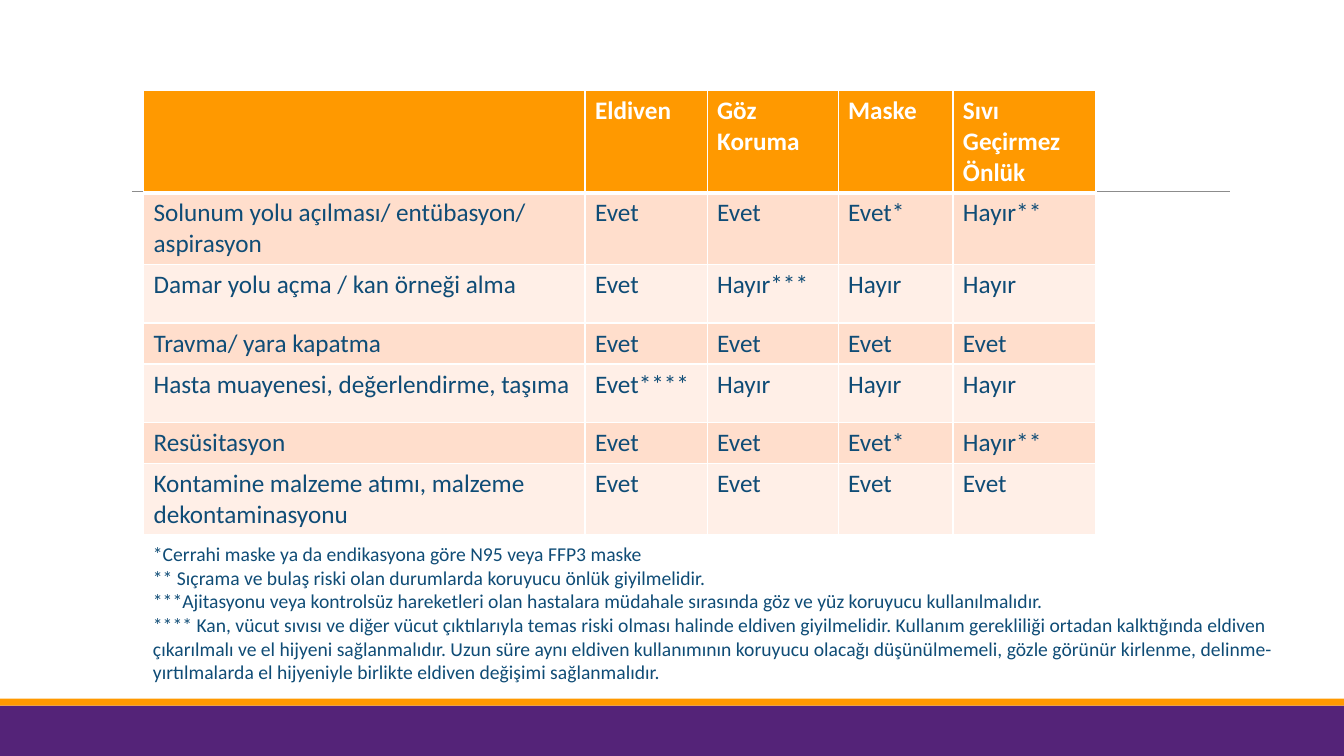
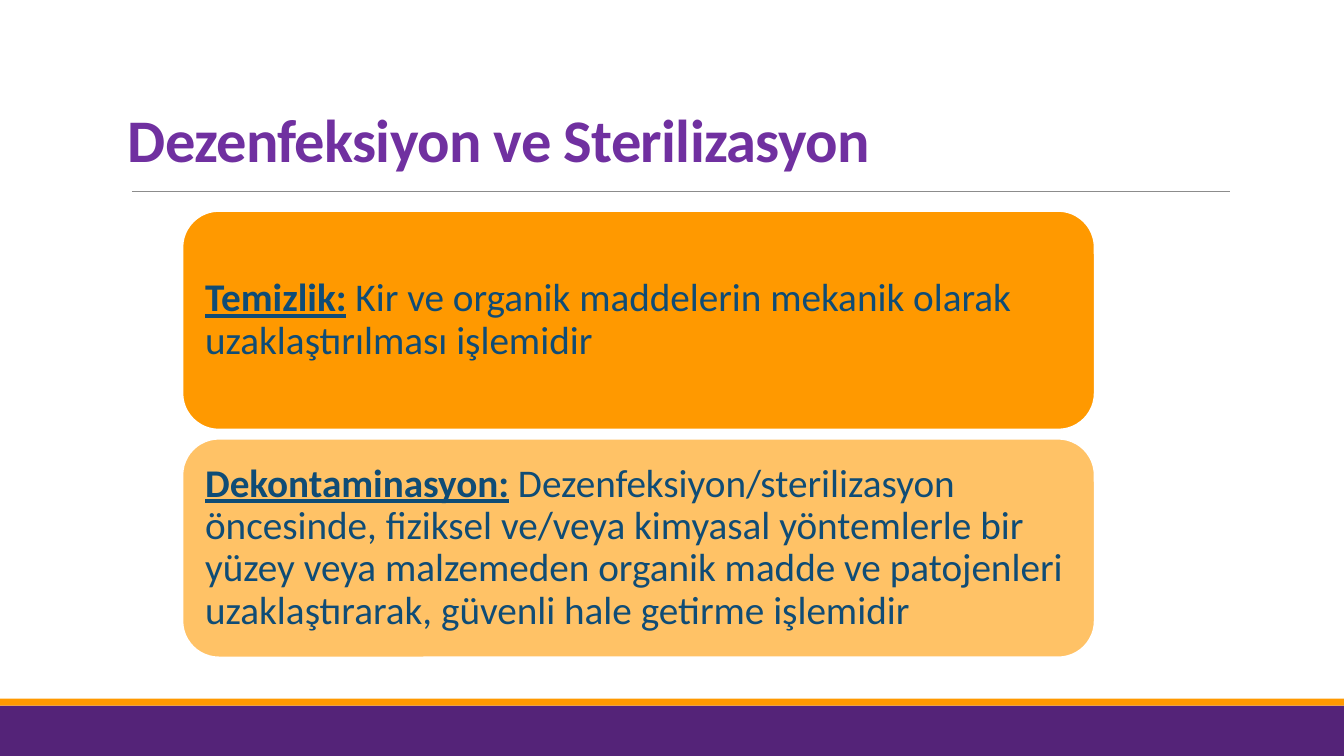
from lxml import etree
from pptx import Presentation
from pptx.dml.color import RGBColor
from pptx.enum import shapes, text
from pptx.oxml import ns
from pptx.util import Pt

COLORS = {
    "purple": "542378", "title": "7030A0", "orange": "FF9900",
    "light_orange": "FFC266", "ink": "0F4C76", "white": "FFFFFF",
    "rule": "8C8C8C", "row_odd": "FFDECC", "row_even": "FFEFE7",
}
FONT = "Calibri"
WIDTH, HEIGHT = 960, 540

PROTECTION_TABLE = [
    ["", "Eldiven", "Göz Koruma", "Maske", "Sıvı Geçirmez Önlük"],
    ["Solunum yolu açılması/ entübasyon/ aspirasyon", "Evet", "Evet", "Evet*", "Hayır**"],
    ["Damar yolu açma / kan örneği alma", "Evet", "Hayır***", "Hayır", "Hayır"],
    ["Travma/ yara kapatma", "Evet", "Evet", "Evet", "Evet"],
    ["Hasta muayenesi, değerlendirme, taşıma", "Evet****", "Hayır", "Hayır", "Hayır"],
    ["Resüsitasyon", "Evet", "Evet", "Evet*", "Hayır**"],
    ["Kontamine malzeme atımı, malzeme dekontaminasyonu", "Evet", "Evet", "Evet", "Evet"],
]
COLUMN_WIDTHS = [315.4, 87.2, 93.6, 82, 102.2]
ROW_HEIGHTS = [60.5, 41.8, 41.8, 27.4, 41.8, 27.4, 47.5]

FOOTNOTES = [
    "*Cerrahi maske ya da endikasyona göre N95 veya FFP3 maske",
    "** Sıçrama ve bulaş riski olan durumlarda koruyucu önlük giyilmelidir.",
    "***Ajitasyonu veya kontrolsüz hareketleri olan hastalara müdahale sırasında göz ve yüz "
    "koruyucu kullanılmalıdır.",
    "**** Kan, vücut sıvısı ve diğer vücut çıktılarıyla temas riski olması halinde eldiven "
    "giyilmelidir. Kullanım gerekliliği ortadan kalktığında eldiven çıkarılmalı ve el hijyeni "
    "sağlanmalıdır. Uzun süre aynı eldiven kullanımının koruyucu olacağı düşünülmemeli, gözle "
    "görünür kirlenme, delinme-yırtılmalarda el hijyeniyle birlikte eldiven değişimi "
    "sağlanmalıdır.",
]
DEFINITIONS = [
    ("Temizlik:", " Kir ve organik maddelerin mekanik olarak uzaklaştırılması işlemidir", "orange"),
    ("Dekontaminasyon:", " Dezenfeksiyon/sterilizasyon öncesinde, fiziksel ve/veya kimyasal "
     "yöntemlerle bir yüzey veya malzemeden organik madde ve patojenleri uzaklaştırarak, güvenli "
     "hale getirme işlemidir", "light_orange"),
]


def rgb(name):
    return RGBColor.from_string(COLORS[name])


class Deck:
    """Holds the shared style and the slide being filled."""

    def __init__(self):
        self.presentation = Presentation()
        self.presentation.slide_width = Pt(WIDTH)
        self.presentation.slide_height = Pt(HEIGHT)
        self.slide = None

    def new_slide(self):
        """Starts a slide with the footer bands and the title rule."""
        self.slide = self.presentation.slides.add_slide(self.presentation.slide_layouts[6])
        self.box(shapes.MSO_SHAPE.RECTANGLE, 0, 504, WIDTH, 36, "purple")
        self.box(shapes.MSO_SHAPE.RECTANGLE, 0, 499, WIDTH, 5, "orange")
        self.rule(94.3, 878.6, 136.6)

    def box(self, kind, left, top, width, height, fill, line=None):
        shape = self.slide.shapes.add_shape(kind, Pt(left), Pt(top), Pt(width), Pt(height))
        shape.shadow.inherit = False
        shape.fill.solid()
        shape.fill.fore_color.rgb = rgb(fill)
        if line:
            shape.line.color.rgb = rgb(line)
            shape.line.width = Pt(1.25)
        else:
            shape.line.fill.background()
        return shape

    def rule(self, left, right, y):
        connector = self.slide.shapes.add_connector(
            shapes.MSO_CONNECTOR.STRAIGHT, Pt(left), Pt(y), Pt(right), Pt(y))
        connector.line.color.rgb = rgb("rule")
        connector.line.width = Pt(0.5)
        etree.SubElement(connector._element.spPr, ns.qn("a:effectLst"))

    def run(self, paragraph, words, size, color="ink", bold=False, underline=False):
        run = paragraph.add_run()
        run.text = words
        font = run.font
        font.name, font.size = FONT, Pt(size)
        font.bold, font.underline = bold, underline
        font.color.rgb = rgb(color)
        return run

    def text_box(self, left, top, width, height):
        frame = self.slide.shapes.add_textbox(
            Pt(left), Pt(top), Pt(width), Pt(height)).text_frame
        frame.word_wrap = True
        return frame

    def title(self, words):
        frame = self.text_box(84.2, 25.2, 676.8, 103)
        frame.vertical_anchor = text.MSO_ANCHOR.BOTTOM
        paragraph = frame.paragraphs[0]
        paragraph.line_spacing = 0.85
        run = self.run(paragraph, words, 43.2, "title", bold=True)
        run.font._element.set("spc", "-50")

    def footnotes(self, notes):
        frame = self.text_box(102.2, 383.8, 843, 108.7)
        for index, note in enumerate(notes):
            paragraph = frame.add_paragraph() if index else frame.paragraphs[0]
            self.run(paragraph, note, 14)

    def definition(self, top, height, term, meaning, fill):
        shape = self.box(shapes.MSO_SHAPE.ROUNDED_RECTANGLE, 130.3, top, 651.6, height,
                         fill, "white")
        frame = shape.text_frame
        frame.word_wrap = True
        frame.vertical_anchor = text.MSO_ANCHOR.MIDDLE
        frame.margin_left = frame.margin_right = Pt(8.6)
        paragraph = frame.paragraphs[0]
        paragraph.alignment = text.PP_ALIGN.LEFT
        paragraph.line_spacing = 0.9
        self.run(paragraph, term, 28, bold=True, underline=True)
        self.run(paragraph, meaning, 28)

    def header_borders(self, cell):
        properties = cell._tc.get_or_add_tcPr()
        for index, (side, width) in enumerate((("lnL", 1), ("lnR", 1), ("lnT", 1), ("lnB", 3))):
            line = etree.Element(ns.qn("a:" + side), w=str(Pt(width)))
            fill = etree.SubElement(line, ns.qn("a:solidFill"))
            etree.SubElement(fill, ns.qn("a:srgbClr"), val=COLORS["white"])
            properties.insert(index, line)

    def table(self, rows, left, top, widths, heights):
        """Adds a table; rows grow to fit their text."""
        table = self.slide.shapes.add_table(
            len(rows), len(widths), Pt(left), Pt(top), Pt(sum(widths)), Pt(sum(heights))).table
        for column, width in zip(table.columns, widths):
            column.width = Pt(width)
        for row_index, values in enumerate(rows):
            table.rows[row_index].height = Pt(heights[row_index])
            is_header = row_index == 0
            fill = "orange" if is_header else "row_odd" if row_index % 2 else "row_even"
            for column_index, value in enumerate(values):
                cell = table.cell(row_index, column_index)
                cell.fill.solid()
                cell.fill.fore_color.rgb = rgb(fill)
                if is_header:
                    self.header_borders(cell)
                if value:
                    self.run(cell.text_frame.paragraphs[0], value, 18,
                             "white" if is_header else "ink", bold=is_header)


def main():
    deck = Deck()

    deck.new_slide()
    deck.table(PROTECTION_TABLE, 102.5, 64.7, COLUMN_WIDTHS, ROW_HEIGHTS)
    deck.footnotes(FOOTNOTES)

    deck.new_slide()
    deck.title("Dezenfeksiyon ve Sterilizasyon")
    card_top, card_height, card_gap = 150.7, 156.2, 6.5
    for index, (term, meaning, fill) in enumerate(DEFINITIONS):
        deck.definition(card_top + index * (card_height + card_gap), card_height,
                        term, meaning, fill)

    deck.presentation.save("out.pptx")


if __name__ == "__main__":
    main()
